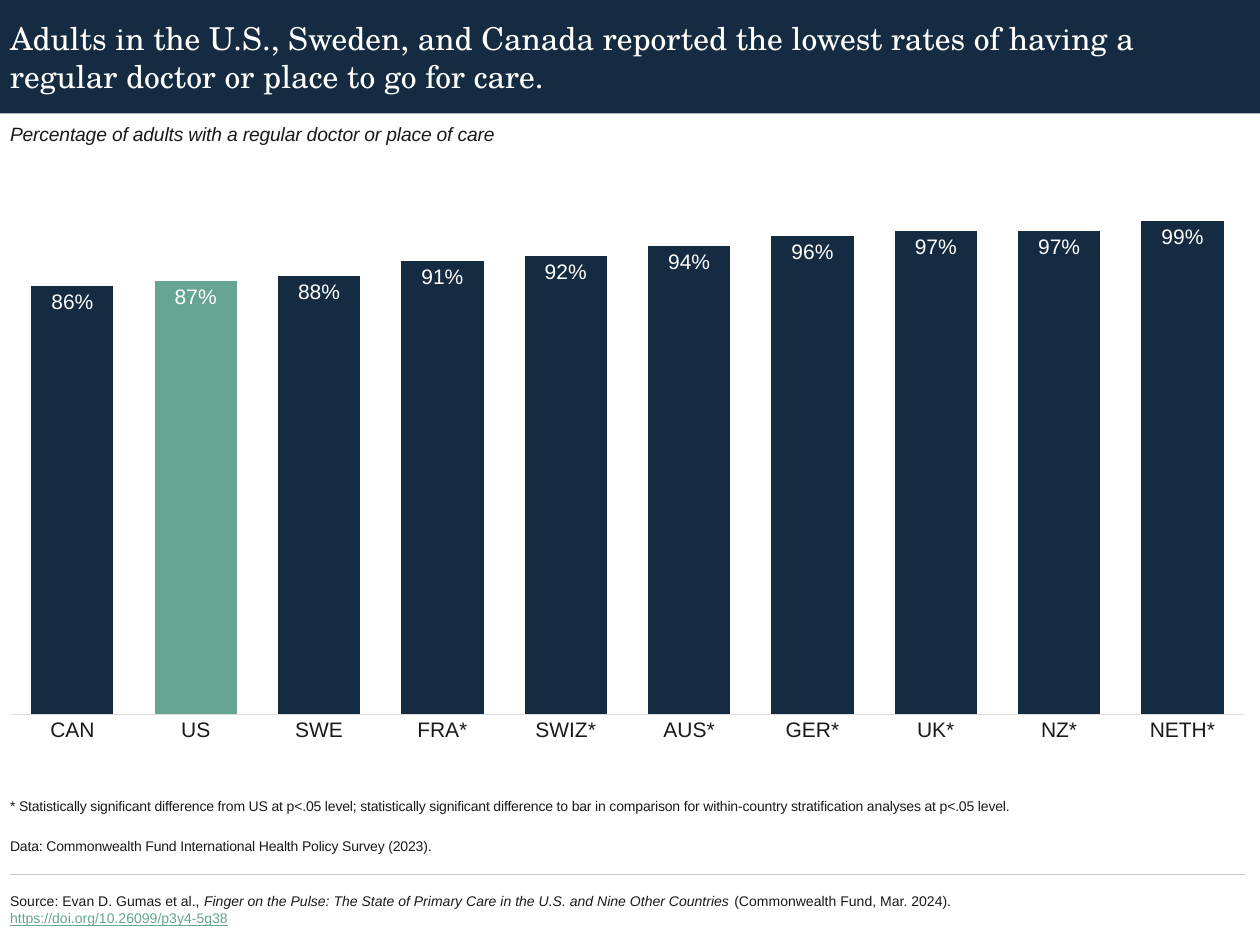
import pptx
import pptx.chart.data
import pptx.dml.color
import pptx.enum.chart
import pptx.enum.shapes
import pptx.enum.text
import pptx.oxml
import pptx.oxml.ns
import pptx.util

Inches, Pt = pptx.util.Inches, pptx.util.Pt
NAVY, GREEN, INK, WHITE = "142B41", "65A591", "1A1A1A", "FFFFFF"
LEFT, WIDE, BAND = 0.08, 9.8, 0.9

TITLE = ("Adults in the U.S., Sweden, and Canada reported the lowest rates of "
         "having a regular doctor or place to go for care.")
LEAD = "Percentage of adults with a regular doctor or place of care"
NOTES = [
    "* Statistically significant difference from US at p<.05 level; statistically "
    "significant difference to bar in comparison for within-country stratification "
    "analyses at p<.05 level.",
    "Data: Commonwealth Fund International Health Policy Survey (2023).",
]
SOURCE = [
    ("Source: Evan D. Gumas et al., ", {}),
    ("Finger on the Pulse: The State of Primary Care in the U.S. and Nine Other "
     "Countries ", {"italic": True}),
    ("(Commonwealth Fund, Mar. 2024). ", {}),
    ("https://doi.org/10.26099/p3y4-5g38", {"color": GREEN, "under": True}),
]
RATES = {"CAN": 0.86, "US": 0.87, "SWE": 0.88, "FRA*": 0.91, "SWIZ*": 0.92,
         "AUS*": 0.94, "GER*": 0.96, "UK*": 0.97, "NZ*": 0.97, "NETH*": 0.99}
FOCUS = "US"
PLOT = {"layoutTarget": "inner", "xMode": "edge", "yMode": "edge",
        "x": 0, "y": 0.04, "w": 1, "h": 0.89}


def paint(target, color):
    if hasattr(target, "solid"):
        target.solid()
        target = target.fore_color
    target.rgb = pptx.dml.color.RGBColor.from_string(color)


def style(font, size, color=INK, face="Arial", italic=False, under=False):
    font.size, font.name = Pt(size), face
    font.italic, font.underline = italic, under
    paint(font.color, color)


def write(shape, paras, box, size, anchor="TOP", gap=0, track=0, **look):
    shape.left, shape.top, shape.width, shape.height = map(Inches, box)
    frame = shape.text_frame
    frame.word_wrap = True
    frame.auto_size = pptx.enum.text.MSO_AUTO_SIZE.NONE
    frame.vertical_anchor = getattr(pptx.enum.text.MSO_ANCHOR, anchor)
    frame.margin_left = frame.margin_right = frame.margin_top = frame.margin_bottom = 0
    for i, runs in enumerate(paras):
        para = frame.add_paragraph() if i else frame.paragraphs[0]
        para.alignment = pptx.enum.text.PP_ALIGN.LEFT
        para.space_before = Pt(gap if i else 0)
        for text, extra in runs:
            run = para.add_run()
            run.text = text
            style(run.font, size, **{**look, **extra})
            if track:
                run._r.get_or_add_rPr().set("spc", str(track))


def plain(*texts):
    return [[(text, {})] for text in texts]


def add_bars(slide):
    data = pptx.chart.data.CategoryChartData(number_format="0%")
    data.categories = list(RATES)
    data.add_series("Series 1", list(RATES.values()))
    chart = slide.shapes.add_chart(
        pptx.enum.chart.XL_CHART_TYPE.COLUMN_CLUSTERED,
        Inches(LEFT), Inches(1.54), Inches(WIDE), Inches(4.44), data).chart
    chart.has_legend = chart.has_title = False
    style(chart.font, 10)

    plot = chart.plots[0]
    plot.gap_width, plot.vary_by_categories = 50, False
    bars = plot.series[0]
    paint(bars.format.fill, NAVY)
    paint(bars.points[list(RATES).index(FOCUS)].format.fill, GREEN)
    plot.has_data_labels = True
    labels = plot.data_labels
    labels.show_value = True
    labels.number_format, labels.number_format_is_linked = "0%", False
    labels.position = pptx.enum.chart.XL_LABEL_POSITION.INSIDE_END
    style(labels.font, 12, WHITE)

    rates = chart.value_axis
    rates.minimum_scale, rates.maximum_scale = 0, 1
    rates.has_major_gridlines = rates.visible = False
    lands = chart.category_axis
    lands.major_tick_mark = pptx.enum.chart.XL_TICK_MARK.NONE
    style(lands.tick_labels.font, 12)
    lands.format.line.width = Pt(0.75)
    paint(lands.format.line.color, "DDDDDD")

    area = chart._chartSpace.chart.plotArea
    for old in area.findall(pptx.oxml.ns.qn("c:layout")):
        area.remove(old)
    parts = "".join(f'<c:{key} val="{val}"/>' for key, val in PLOT.items())
    area.insert(0, pptx.oxml.parse_xml(
        f'<c:layout {pptx.oxml.ns.nsdecls("c")}><c:manualLayout>{parts}'
        '</c:manualLayout></c:layout>'))


def main():
    deck = pptx.Presentation()
    deck.slide_width, deck.slide_height = Inches(10), Inches(7.5)
    slide = deck.slides.add_slide(deck.slide_layouts[5])
    shapes = slide.shapes

    band = shapes.add_shape(pptx.enum.shapes.MSO_SHAPE.RECTANGLE,
                            0, 0, deck.slide_width, Inches(BAND))
    band.shadow.inherit = False
    paint(band.fill, NAVY)
    band.line.fill.background()
    shapes._spTree.insert(2, band._element)
    write(shapes.title, plain(TITLE), (LEFT, 0, WIDE, BAND), 18, "MIDDLE",
          color=WHITE, face="TeX Gyre Schola")

    def add_text(*args, **look):
        write(shapes.add_textbox(0, 0, 0, 0), *args, **look)

    add_text(plain(LEAD), (LEFT, 0.97, WIDE, 0.42), 11, italic=True, track=-10)
    add_bars(slide)
    add_text(plain(*NOTES), (LEFT, 6.03, WIDE, 0.75), 8, "BOTTOM", gap=13, track=-10)

    rule = shapes.add_connector(pptx.enum.shapes.MSO_CONNECTOR.STRAIGHT,
                                Inches(LEFT), Inches(6.94),
                                Inches(LEFT + WIDE), Inches(6.94))
    rule.line.width = Pt(0.75)
    paint(rule.line.color, "C6C6C6")
    rule._element.spPr.append(pptx.oxml.parse_xml(
        f'<a:effectLst {pptx.oxml.ns.nsdecls("a")}/>'))
    add_text([SOURCE], (LEFT, 6.99, 8.05, 0.46), 8, "MIDDLE")
    deck.save("out.pptx")


if __name__ == "__main__":
    main()
